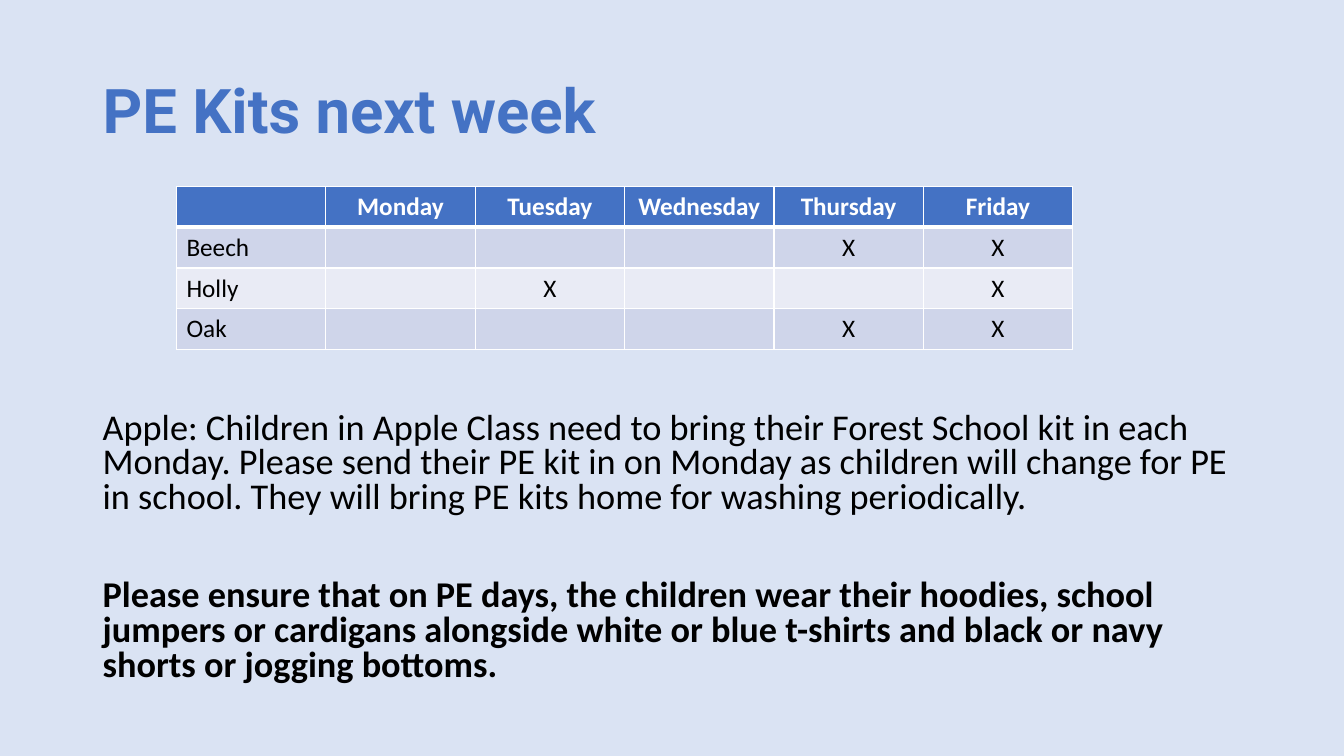
from lxml.etree import SubElement
from pptx import Presentation
from pptx.dml.color import RGBColor
from pptx.enum.text import MSO_ANCHOR as Anchor, PP_ALIGN as Align
from pptx.oxml.ns import qn
from pptx.util import Inches, Pt

BACKGROUND = RGBColor(0xDA, 0xE3, 0xF3)
BLUE = RGBColor(0x44, 0x72, 0xC4)
BAND_DARK = RGBColor(0xCF, 0xD5, 0xEA)
BAND_LIGHT = RGBColor(0xE9, 0xEB, 0xF5)
WHITE = RGBColor(0xFF, 0xFF, 0xFF)
BLACK = RGBColor(0x00, 0x00, 0x00)

DAYS = ["Monday", "Tuesday", "Wednesday", "Thursday", "Friday"]
PE_DAYS = {
    "Beech": ["Thursday", "Friday"],
    "Holly": ["Tuesday", "Friday"],
    "Oak": ["Thursday", "Friday"],
}
APPLE_NOTE = (
    "Apple: Children in Apple Class need to bring their Forest School kit in each "
    "Monday. Please send their PE kit in on Monday as children will change for PE "
    "in school. They will bring PE kits home for washing periodically."
)
CLOTHING_NOTE = (
    "Please ensure that on PE days, the children wear their hoodies, school "
    "jumpers or cardigans alongside white or blue t-shirts and black or navy "
    "shorts or jogging bottoms."
)


def write(paragraph, text, size=18, font="Calibri", color=BLACK, bold=False,
          align=Align.LEFT, line_spacing=1.0, space_before=0):
    paragraph.alignment = align
    paragraph.line_spacing = line_spacing
    paragraph.space_before = Pt(space_before)
    run = paragraph.add_run()
    run.text = text
    run.font.size = Pt(size)
    run.font.name = font
    run.font.bold = bold
    run.font.color.rgb = color


def add_text_frame(slide, left, top, width, height, anchor=Anchor.TOP):
    box = slide.shapes.add_textbox(
        Inches(left), Inches(top), Inches(width), Inches(height))
    box.text_frame.word_wrap = True
    box.text_frame.vertical_anchor = anchor
    return box.text_frame


def set_borders(cell, bottom_width):
    properties = cell._tc.get_or_add_tcPr()
    widths = {"a:lnL": 1, "a:lnR": 1, "a:lnT": 1, "a:lnB": bottom_width}
    for tag, width in widths.items():
        line = SubElement(properties, qn(tag), w=str(Pt(width)))
        fill = SubElement(line, qn("a:solidFill"))
        SubElement(fill, qn("a:srgbClr"), val=str(WHITE))


def add_timetable(slide):
    rows = [["", *DAYS]]
    for name, days in PE_DAYS.items():
        rows.append([name, *("X" if day in days else "" for day in DAYS)])
    table = slide.shapes.add_table(
        len(rows), len(rows[0]),
        Inches(1.75), Inches(1.85), Inches(8.89), Inches(1.62)).table
    for row_index, row in enumerate(rows):
        header = row_index == 0
        band = BAND_DARK if row_index % 2 else BAND_LIGHT
        for column_index, text in enumerate(row):
            cell = table.cell(row_index, column_index)
            set_borders(cell, bottom_width=3 if header else 1)
            cell.fill.solid()
            cell.fill.fore_color.rgb = BLUE if header else band
            if text:
                write(cell.text_frame.paragraphs[0], text, bold=header,
                      color=WHITE if header else BLACK,
                      align=Align.CENTER if column_index else Align.LEFT)


def add_notes_for_parents(slide):
    frame = add_text_frame(slide, 0.92, 2, 11.5, 4.76)
    frame.margin_top = Inches(2.09)
    write(frame.paragraphs[0], APPLE_NOTE, size=25.9, line_spacing=0.8)
    write(frame.add_paragraph(), CLOTHING_NOTE, size=25.9, bold=True,
          line_spacing=0.8, space_before=45)


def main():
    presentation = Presentation()
    presentation.slide_width = Inches(13.33)
    presentation.slide_height = Inches(7.5)
    slide = presentation.slides.add_slide(presentation.slide_layouts[6])
    slide.background.fill.solid()
    slide.background.fill.fore_color.rgb = BACKGROUND

    title = add_text_frame(slide, 0.92, 0.4, 11.5, 1.45, anchor=Anchor.MIDDLE)
    write(title.paragraphs[0], "PE Kits next week", size=44, font="Roboto",
          color=BLUE, bold=True, line_spacing=0.9)
    add_notes_for_parents(slide)
    add_timetable(slide)
    presentation.save("out.pptx")


if __name__ == "__main__":
    main()
